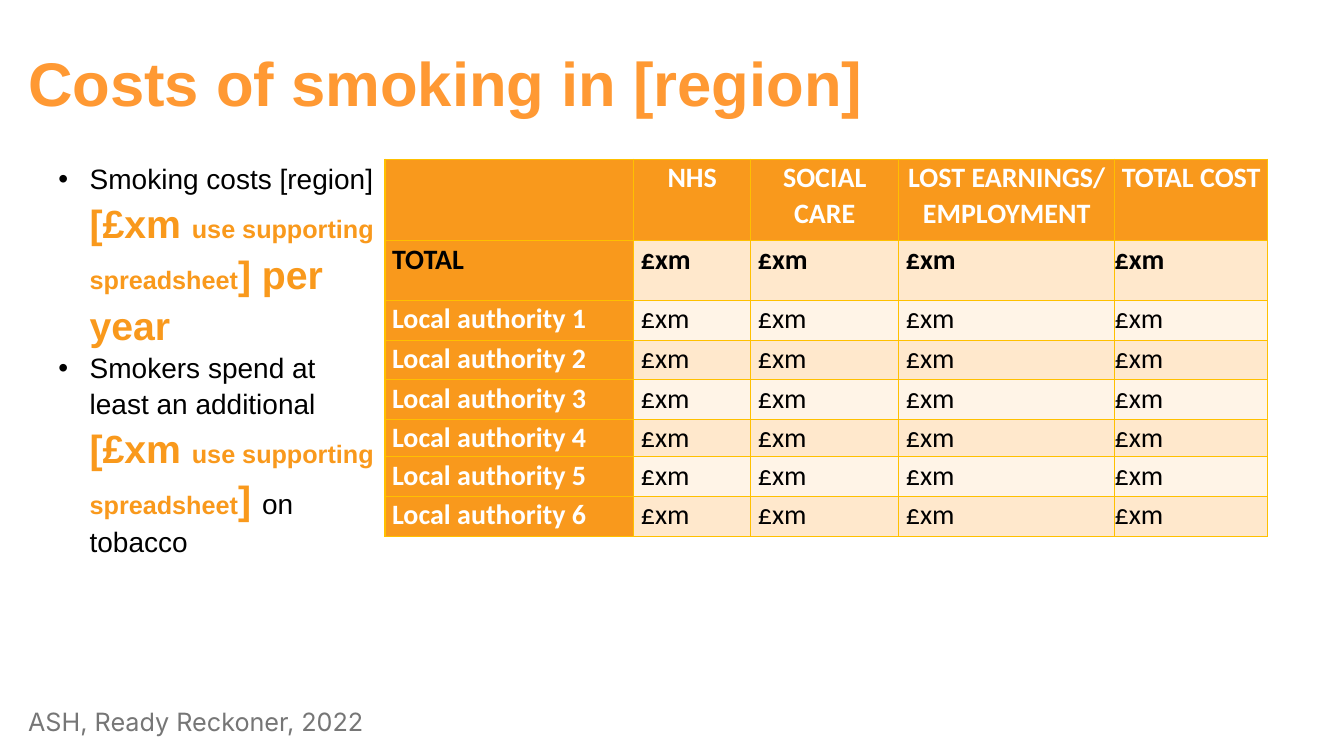
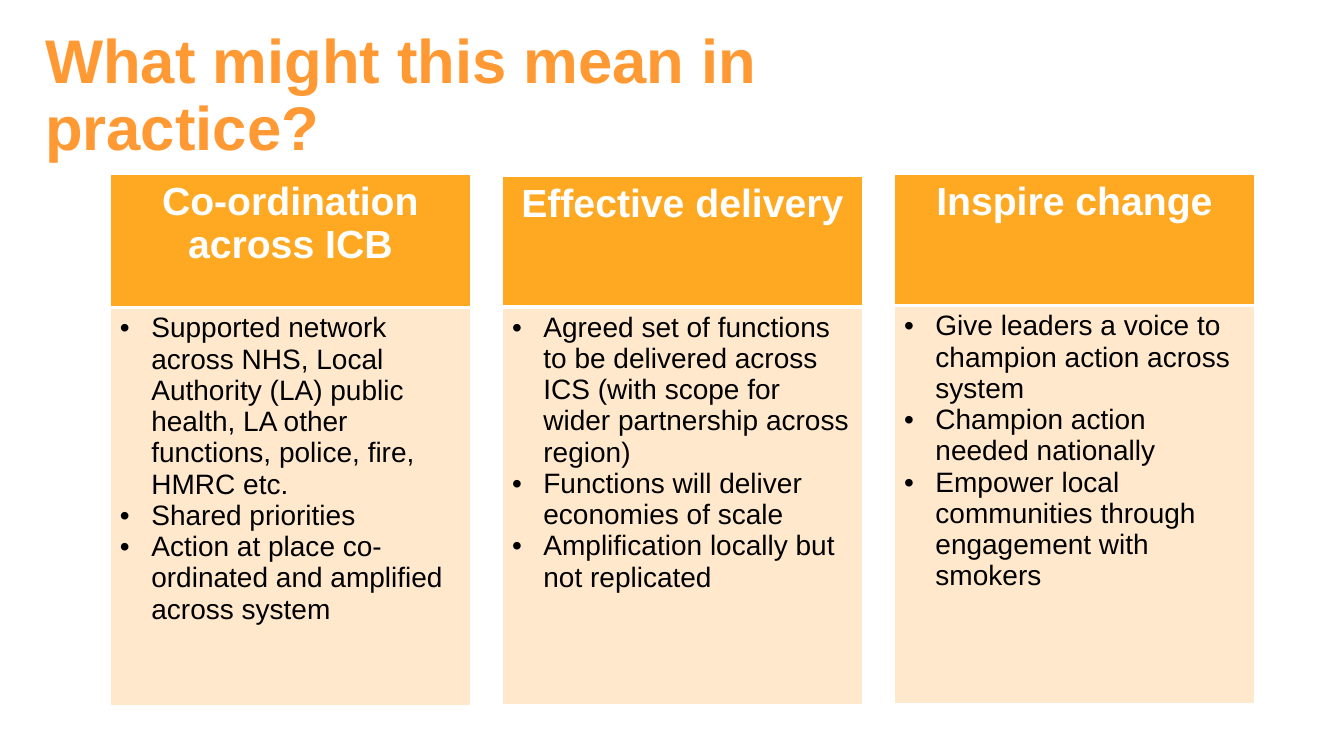
from lxml.etree import SubElement
from pptx import Presentation
from pptx.dml.color import RGBColor
from pptx.enum.text import MSO_ANCHOR, PP_ALIGN
from pptx.oxml.ns import qn
from pptx.util import Cm, Pt

TITLE = RGBColor(0xFF, 0x99, 0x33)
ORANGE = RGBColor(0xF9, 0x99, 0x1C)
AMBER = RGBColor(0xFF, 0xA8, 0x22)
GOLD = RGBColor(0xFF, 0xC0, 0x00)
PEACH = RGBColor(0xFF, 0xE8, 0xCC)
CREAM = RGBColor(0xFF, 0xF4, 0xE7)
GREY = RGBColor(0x76, 0x76, 0x76)
BLACK = RGBColor(0, 0, 0)
WHITE = RGBColor(0xFF, 0xFF, 0xFF)

HEADS = ["", "NHS", "SOCIAL CARE", "LOST EARNINGS/ EMPLOYMENT", "TOTAL COST"]
NAMES = ["TOTAL"] + [f"Local authority {n}" for n in range(1, 7)]
COLS = [6.27, 2.95, 3.73, 5.44, 3.86]
ROWS = [2.06, 1.5, 1, 1, 1, 0.94, 1, 1]

# Each run: text, size, whether it is stressed
COSTS = [
    [("Smoking costs [region] ", 20, False), ("[£xm ", 28, True),
     ("use supporting spreadsheet", 18, True), ("] per year", 28, True)],
    [("Smokers spend at least an additional ", 20, False), ("[£xm ", 28, True),
     ("use supporting spreadsheet", 18, True), ("] ", 28, True),
     ("on tobacco", 20, False)],
]

# Each card: top, head height, head, points
CARDS = [
    (4.4, 3.35, "Co-ordination across ICB", [
        "Supported network across NHS, Local Authority (LA) public health, "
        "LA other functions, police, fire, HMRC etc.",
        "Shared priorities",
        "Action at place co-ordinated and amplified across system"]),
    (4.45, 3.28, "Effective delivery", [
        "Agreed set of functions to be delivered across ICS "
        "(with scope for wider partnership across region)",
        "Functions will deliver economies of scale",
        "Amplification locally but not replicated"]),
    (4.4, 3.3, "Inspire change", [
        "Give leaders a voice to champion action across system",
        "Champion action needed nationally",
        "Empower local communities through engagement with smokers"]),
]


def style(font, size, color, bold=False, name="Arial"):
    font.name, font.size, font.bold = name, Pt(size), bold
    font.color.rgb = color


def bullet(para):
    props = para._p.get_or_add_pPr()
    props.set("marL", str(Cm(0.79)))
    props.set("indent", str(-Cm(0.79)))
    SubElement(props, qn("a:buFont"), typeface="Arial")
    SubElement(props, qn("a:buChar"), char="•")


def add_box(slide, left, top, width, height):
    box = slide.shapes.add_textbox(Cm(left), Cm(top), Cm(width), Cm(height))
    box.text_frame.word_wrap = True
    return box.text_frame


def add_title(slide, text, left, top, width):
    frame = add_box(slide, left, top, width, 3.68)
    frame.vertical_anchor = MSO_ANCHOR.MIDDLE
    para = frame.paragraphs[0]
    para.text = text
    para.line_spacing = 0.9
    style(para.font, 44, TITLE, True)


def add_grid(slide, left, top, cols, rows):
    shape = slide.shapes.add_table(len(rows), len(cols), Cm(left), Cm(top),
                                   Cm(sum(cols)), Cm(sum(rows)))
    table = shape.table
    table.first_row = table.horz_banding = False
    for col, width in zip(table.columns, cols):
        col.width = Cm(width)
    for row, height in zip(table.rows, rows):
        row.height = Cm(height)
    return table


def paint(cell, fill, edge, base=1):
    """Draw the four borders, the lower one `base` points wide, then fill."""
    props = cell._tc.get_or_add_tcPr()
    for side, width in (("L", 1), ("R", 1), ("T", 1), ("B", base)):
        line = SubElement(props, qn(f"a:ln{side}"), w=str(Pt(width)))
        solid = SubElement(line, qn("a:solidFill"))
        SubElement(solid, qn("a:srgbClr"), val=str(edge))
    cell.fill.solid()
    cell.fill.fore_color.rgb = fill


def add_costs(slide, left, top):
    table = add_grid(slide, left, top, COLS, ROWS)
    data = [HEADS] + [[name] + ["£xm"] * 4 for name in NAMES]
    for r, row in enumerate(data):
        for c, text in enumerate(row):
            cell = table.cell(r, c)
            side = 0 if c == len(row) - 1 else 0.18
            cell.margin_left = cell.margin_right = Cm(side)
            cell.margin_top = cell.margin_bottom = 0
            head = r == 0 or c == 0
            band = PEACH if r % 2 else CREAM
            paint(cell, ORANGE if head else band, GOLD)
            para = cell.text_frame.paragraphs[0]
            para.text = text
            para.line_spacing = 1.05
            if r == 0:
                para.alignment = PP_ALIGN.CENTER
            color = WHITE if head and r != 1 else BLACK
            style(para.font, 20, color, head or r == 1, "Calibri")


def add_points(slide, left, top, width, height):
    frame = add_box(slide, left, top, width, height)
    for i, runs in enumerate(COSTS):
        para = frame.add_paragraph() if i else frame.paragraphs[0]
        bullet(para)
        para.line_spacing = 1.08
        for text, size, stress in runs:
            run = para.add_run()
            run.text = text
            style(run.font, size, ORANGE if stress else BLACK, stress)


def add_source(slide, left, top, width, height):
    para = add_box(slide, left, top, width, height).paragraphs[0]
    para.text = "ASH, Ready Reckoner, 2022"
    style(para.font, 18, GREY, name="Inter")


def add_card(slide, left, top, width, depth, head, points):
    table = add_grid(slide, left, top, [width], [depth, 10.03])
    cap, body = table.cell(0, 0), table.cell(1, 0)
    paint(cap, AMBER, WHITE, 3)
    paint(body, PEACH, WHITE)
    para = cap.text_frame.paragraphs[0]
    para.text = head
    para.alignment = PP_ALIGN.CENTER
    style(para.font, 28, WHITE, True)
    frame = body.text_frame
    for i, text in enumerate(points):
        para = frame.add_paragraph() if i else frame.paragraphs[0]
        para.text = text
        bullet(para)
        style(para.font, 20, BLACK)


def cost_slide(slide):
    add_title(slide, "Costs of smoking in [region]", 0.46, 0.33, 27.74)
    add_costs(slide, 9.7, 4.01)
    add_source(slide, 0.46, 17.68, 17, 1.02)
    add_points(slide, 1.22, 3.89, 8.48, 9.65)


def card_slide(slide):
    add_title(slide, "What might this mean in practice?", 0.89, 0.61, 24.38)
    width, gap = 9.09, 0.79
    for i, (top, depth, head, points) in enumerate(CARDS):
        left = 2.77 + i * (width + gap)
        add_card(slide, left, top, width, depth, head, points)


def main():
    deck = Presentation()
    deck.slide_width, deck.slide_height = Cm(33.87), Cm(19.05)
    for build in (cost_slide, card_slide):
        build(deck.slides.add_slide(deck.slide_layouts[6]))
    deck.save("out.pptx")


if __name__ == "__main__":
    main()
